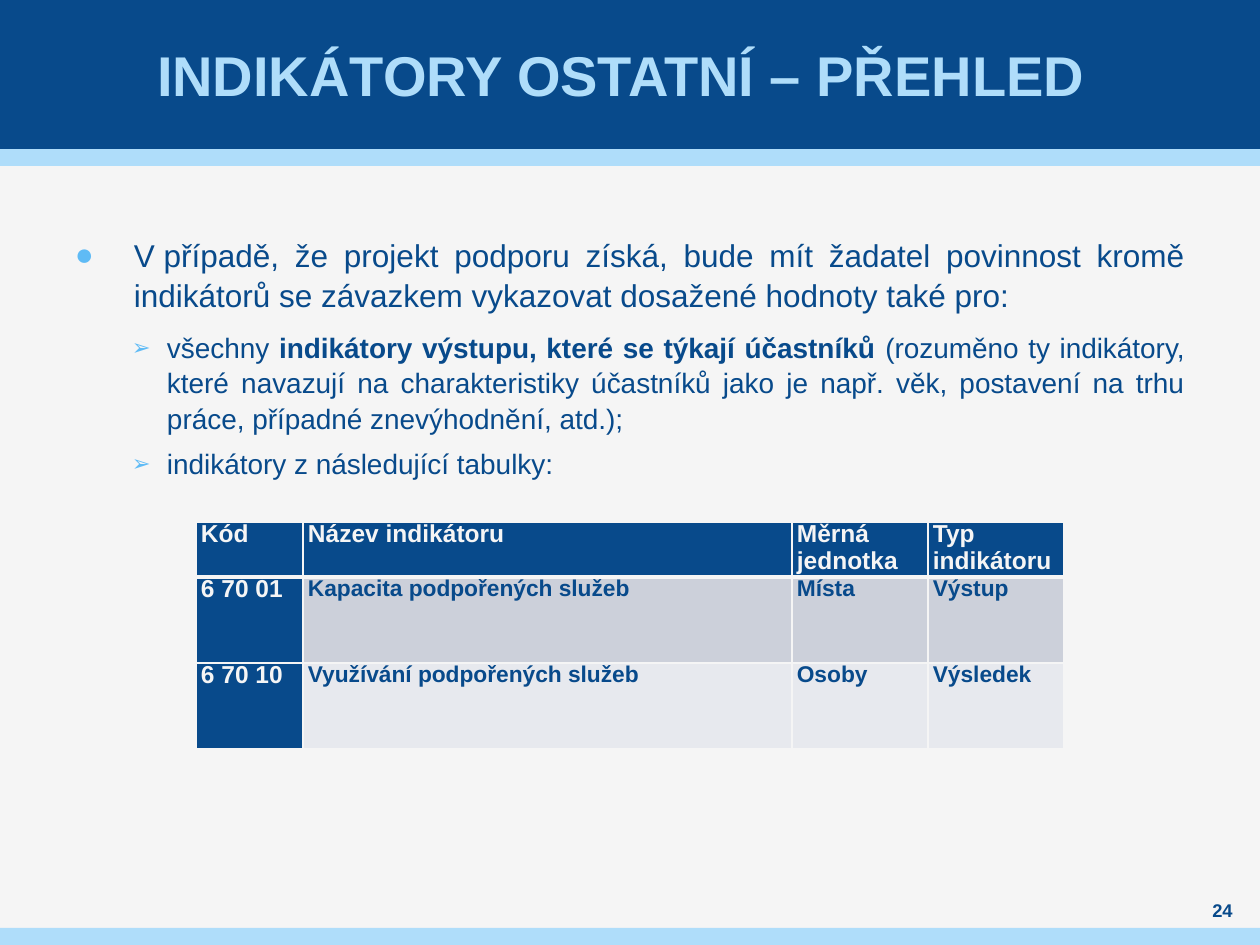
from lxml.etree import SubElement, fromstring
from pptx import Presentation
from pptx.dml.color import RGBColor
from pptx.enum.shapes import MSO_SHAPE as Shape
from pptx.enum.text import MSO_ANCHOR as Anchor, MSO_AUTO_SIZE as AutoSize, PP_ALIGN as Align
from pptx.oxml.ns import nsdecls, qn
from pptx.util import Emu, Pt

NAVY, SKY, BULLET, PAPER = "084A8B", "AFDDFA", "5FBBF5", "F5F5F5"
BANDS = ("CCD0DA", "E7E9EE")

BODY = [
    (0, [("V\u00a0případě, že projekt podporu získá, bude mít žadatel povinnost kromě "
          "indikátorů se závazkem vykazovat dosažené hodnoty také pro:", False)]),
    (1, [("všechny ", False),
         ("indikátory výstupu, které se týkají účastníků ", True),
         ("(rozuměno ty indikátory, které navazují na charakteristiky účastníků jako je "
          "např. věk, postavení na trhu práce, případné znevýhodnění, atd.);", False)]),
    (1, [("indikátory z\u00a0následující tabulky:", False)]),
]
LEVELS = [
    dict(size=18, space=6, indent=59, hang=59, char="●", scale=100),
    dict(size=16, space=3, indent=92, hang=35, char="➢", scale=80),
]
ROWS = [
    ["Kód", "Název indikátoru", "Měrná jednotka", "Typ indikátoru"],
    ["6 70 01", "Kapacita podpořených služeb", "Místa", "Výstup"],
    ["6 70 10", "Využívání podpořených služeb", "Osoby", "Výsledek"],
]


def px(n):
    """Turn pixels into EMU."""
    return Emu(round(n * 914400 / 126))


def rgb(value):
    """Turn a hex string into a colour."""
    return RGBColor.from_string(value)


class Deck:
    """Hold the style and the current slide."""

    def __init__(self, font):
        self.font = font
        self.prs = Presentation()
        self.prs.slide_width, self.prs.slide_height = px(1260), px(945)

    def add_slide(self, background):
        """Start a title-only slide."""
        self.s = self.prs.slides.add_slide(self.prs.slide_layouts[5])
        self.s.background.fill.solid()
        self.s.background.fill.fore_color.rgb = rgb(background)

    def bar(self, top, height, color):
        """Draw a full-width bar."""
        sp = self.s.shapes.add_shape(Shape.RECTANGLE, 0, px(top), self.prs.slide_width, px(height))
        sp.shadow.inherit = False
        sp.fill.solid()
        sp.fill.fore_color.rgb = rgb(color)
        sp.line.fill.background()

    def style(self, r, size, color, bold):
        """Format one run."""
        r.font.name, r.font.size, r.font.bold = self.font, Pt(size), bold
        r.font.color.rgb = rgb(color)

    def frame(self, sp, anchor, side=0):
        """Set up a wrapping text frame without vertical margins."""
        tf = sp.text_frame
        tf.word_wrap, tf.auto_size, tf.vertical_anchor = True, AutoSize.NONE, anchor
        tf.margin_left = tf.margin_right = px(side)
        tf.margin_top = tf.margin_bottom = 0
        return tf

    def line(self, sp, text, size, color, side=0):
        """Write one centred bold line."""
        tf = self.frame(sp, Anchor.MIDDLE, side)
        tf.text = text
        p = tf.paragraphs[0]
        p.alignment = Align.CENTER
        self.style(p.runs[0], size, color, True)

    def title(self, text, left, top, width, height):
        """Place the title in front of the bars."""
        sp = self.s.shapes.title
        sp.left, sp.top, sp.width, sp.height = map(px, (left, top, width, height))
        self.line(sp, text, 32, SKY, 5)
        sp.element.getparent().append(sp.element)

    def box(self, left, top, width, height):
        """Add an empty text box."""
        return self.s.shapes.add_textbox(*map(px, (left, top, width, height)))

    def bullet(self, p, indent, hang, char, scale):
        """Give a paragraph its indent and bullet."""
        pPr = p._p.get_or_add_pPr()
        pPr.set("marL", str(px(indent)))
        pPr.set("indent", str(px(-hang)))
        SubElement(SubElement(pPr, qn("a:buClr")), qn("a:srgbClr"), val=BULLET)
        SubElement(pPr, qn("a:buSzPct"), val=str(scale * 1000))
        SubElement(pPr, qn("a:buFont"), typeface=self.font)
        SubElement(pPr, qn("a:buChar"), char=char)

    def bullets(self, items, *place):
        """Write a justified two-level list."""
        tf = self.frame(self.box(*place), Anchor.TOP)
        for i, (level, parts) in enumerate(items):
            look = LEVELS[level]
            p = tf.add_paragraph() if i else tf.paragraphs[0]
            self.bullet(p, look["indent"], look["hang"], look["char"], look["scale"])
            p.level, p.alignment, p.line_spacing = level, Align.JUSTIFY, 1.05
            p.space_before = Pt(look["space"] if i else 0)
            p.space_after = Pt(look["space"])
            for text, bold in parts:
                r = p.add_run()
                r.text = text
                self.style(r, look["size"], NAVY, bold)

    def borders(self, cell, widths):
        """Draw the left, right, top and bottom border of a cell."""
        tcPr = cell._tc.get_or_add_tcPr()
        for i, (side, width) in enumerate(zip("LRTB", widths)):
            tcPr.insert(i, fromstring(
                f'<a:ln{side} {nsdecls("a")} w="{Pt(width)}"><a:solidFill>'
                f'<a:srgbClr val="{PAPER}"/></a:solidFill></a:ln{side}>'))

    def cell(self, cell, text, size, color, fill):
        """Fill a cell and write its bold text."""
        cell.fill.solid()
        cell.fill.fore_color.rgb = rgb(fill)
        cell.margin_left = px(5)
        cell.margin_right = cell.margin_top = cell.margin_bottom = 0
        cell.text = text
        p = cell.text_frame.paragraphs[0]
        p.line_spacing, p.space_after = 0.95, Pt(3)
        self.style(p.runs[0], size, color, True)

    def table(self, rows, left, top, widths, heights):
        """Build a table with a dark header row and first column."""
        place = map(px, (left, top, sum(widths), sum(heights)))
        table = self.s.shapes.add_table(len(rows), len(widths), *place).table
        for column, width in zip(table.columns, widths):
            column.width = px(width)
        for i, (row, height) in enumerate(zip(rows, heights)):
            table.rows[i].height = px(height)
            for j, text in enumerate(row):
                cell = table.cell(i, j)
                if i == 0 or j == 0:
                    self.cell(cell, text, 14, PAPER, NAVY)
                else:
                    self.cell(cell, text, 13, NAVY, BANDS[(i - 1) % 2])
                self.borders(cell, (1, 1, 3 if i == 1 else 1, 3 if i == 0 else 1))


def main():
    """Build and save the slide."""
    deck = Deck("Arial")
    deck.add_slide(PAPER)
    deck.bar(149, 17, SKY)
    deck.bar(0, 149, NAVY)
    deck.bar(928, 17, SKY)
    deck.title("INDIKÁTORY OSTATNÍ – PŘEHLED ", 49, 0, 1160, 149)
    deck.bullets(BODY, 75, 234, 1110, 605)
    deck.line(deck.box(1190, 898, 65, 25), "24", 10.5, NAVY)
    deck.table(ROWS, 196, 522, [107, 489, 136, 136], [55, 86, 86])
    deck.prs.save("out.pptx")


if __name__ == "__main__":
    main()
